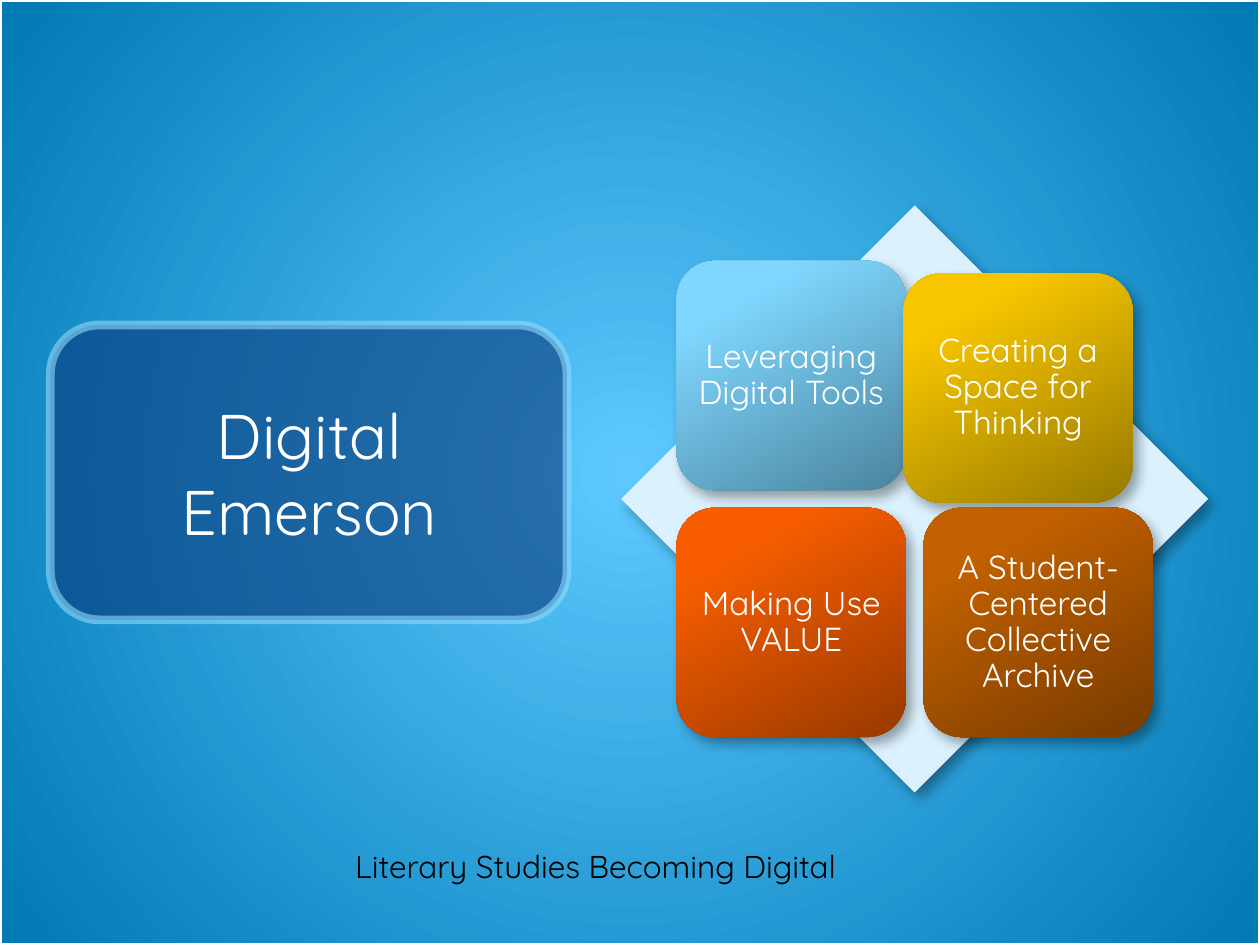
from lxml import etree
from pptx import Presentation
from pptx.dml.color import RGBColor
from pptx.enum.shapes import MSO_SHAPE
from pptx.enum.text import MSO_ANCHOR, MSO_AUTO_SIZE, PP_ALIGN
from pptx.oxml.ns import qn
from pptx.util import Inches, Pt

RECT, ROUND, GEM = MSO_SHAPE.RECTANGLE, MSO_SHAPE.ROUNDED_RECTANGLE, MSO_SHAPE.DIAMOND
MIDDLE, TOP = MSO_ANCHOR.MIDDLE, MSO_ANCHOR.TOP
CENTER, LEFT = PP_ALIGN.CENTER, PP_ALIGN.LEFT
GROW = MSO_AUTO_SIZE.SHAPE_TO_FIT_TEXT

# Grid of 100 columns by 75 rows on a 10 x 7.5 inch slide
COLS, ROWS = 100, 75
WIDE, HIGH = Inches(10), Inches(7.5)
FONT = "Quicksand"
WHITE, BLACK = "FFFFFF", "000000"
CARD, PAD = 18.2, 0.9

# Card: column, row, words, gradient from dark to light
CARDS = [
    (53.7, 20.7, "Leveraging Digital Tools", ("4B849E", "7FD7FF", "81D7FF")),
    (71.7, 21.7, "Creating a Space for Thinking", ("977900", "F7C600", "F8C700")),
    (53.7, 40.3, "Making Use VALUE", ("983900", "F85E00", "F95E00")),
    (73.3, 40.3, "A Student-Centered Collective Archive", ("773B00", "C36100", "C46100")),
]


def paint(code):
    return RGBColor.from_string(code)


def cells(col, row, wide, high):
    w, h = WIDE / COLS, HIGH / ROWS
    return [round(n) for n in (col * w, row * h, wide * w, high * h)]


def node(top, tag, **attrs):
    item = etree.SubElement(top, qn(tag))
    for key, val in attrs.items():
        item.set(key, str(val))
    return item


def fade(fill, share):
    """Set the opacity, in percent, of a solid fill or line."""
    tone = fill.find(qn("a:solidFill"))[0]
    node(tone, "a:alpha", val=share * 1000)


def blend(grad, stops):
    """Empty a gradient and give it new stops."""
    for part in list(grad):
        grad.remove(part)
    band = node(grad, "a:gsLst")
    for spot, code in stops:
        stop = node(band, "a:gs", pos=spot * 1000)
        node(stop, "a:srgbClr", val=code)


def backdrop(slide):
    slide.background.fill.gradient()
    grad = slide.element.find(".//" + qn("a:gradFill"))
    blend(grad, [(0, "5DC9FF"), (100, "0079B5")])
    ring = node(grad, "a:path", path="circle")
    node(ring, "a:fillToRect", l=50000, t=50000, r=50000, b=50000)


def block(slide, kind, box, fill=None, line=None, width=1):
    shape = slide.shapes.add_shape(kind, *cells(*box))
    shape.shadow.inherit = False
    if fill:
        shape.fill.solid()
        shape.fill.fore_color.rgb = paint(fill)
    else:
        shape.fill.background()
    if line:
        shape.line.color.rgb = paint(line)
        shape.line.width = Pt(width)
    else:
        shape.line.fill.background()
    return shape


def shade(shape):
    """Drop a soft shadow to the lower right."""
    glow = shape.element.spPr.find(qn("a:effectLst"))
    cast = node(glow, "a:outerShdw", blurRad=Pt(7), dist=Pt(5),
                dir=50 * 60000, algn="tl", rotWithShape=0)
    node(node(cast, "a:srgbClr", val=BLACK), "a:alpha", val=35000)


def label(slide, box, words, size, color=WHITE, align=CENTER, space=None, **frame):
    text = slide.shapes.add_textbox(*cells(*box)).text_frame
    for key, val in {"word_wrap": True, "vertical_anchor": MIDDLE, **frame}.items():
        setattr(text, key, val)
    para = text.paragraphs[0]
    para.text = words
    para.alignment = align
    if space:
        para.line_spacing = space
    look = {"name": FONT, "size": Pt(size)}
    for key, val in look.items():
        setattr(para.runs[0].font, key, val)
    para.runs[0].font.color.rgb = paint(color)


def card(slide, col, row, words, tones):
    shape = block(slide, ROUND, (col, row, CARD, CARD))
    shape.fill.gradient()
    grad = shape.element.spPr.find(qn("a:gradFill"))
    blend(grad, zip((0, 80, 100), tones))
    node(grad, "a:lin", ang=240 * 60000, scaled=0)
    shade(shape)
    side = CARD - 2 * PAD
    sides = ("left", "top", "right", "bottom")
    inset = {"margin_" + edge: Inches(0.08) for edge in sides}
    label(slide, (col + PAD, row + PAD, side, side), words, 19, space=0.9, **inset)


def main():
    deck = Presentation()
    deck.slide_width, deck.slide_height = WIDE, HIGH
    slide = deck.slides.add_slide(deck.slide_layouts[6])

    # Background and frame
    backdrop(slide)
    block(slide, RECT, (0, 0, COLS, ROWS), line=WHITE, width=2)

    # Title panel
    panel = block(slide, ROUND, (4, 25.8, 41, 23.4), "073779", "8FD9FB", 5)
    fade(panel.element.spPr, 60)
    fade(panel.element.spPr.find(qn("a:ln")), 60)
    label(slide, (5.8, 27.5, 37.5, 20), "Digital Emerson", 36)

    # Diamond with four cards
    shade(block(slide, GEM, (49.3, 16.3, 46.6, 46.6), "DBF1FD"))
    for item in CARDS:
        card(slide, *item)

    # Caption
    label(slide, (27.2, 66.7, 43, 4), "Literary Studies Becoming Digital", 18, BLACK,
          LEFT, word_wrap=False, vertical_anchor=TOP, auto_size=GROW)

    deck.save("out.pptx")


if __name__ == "__main__":
    main()
